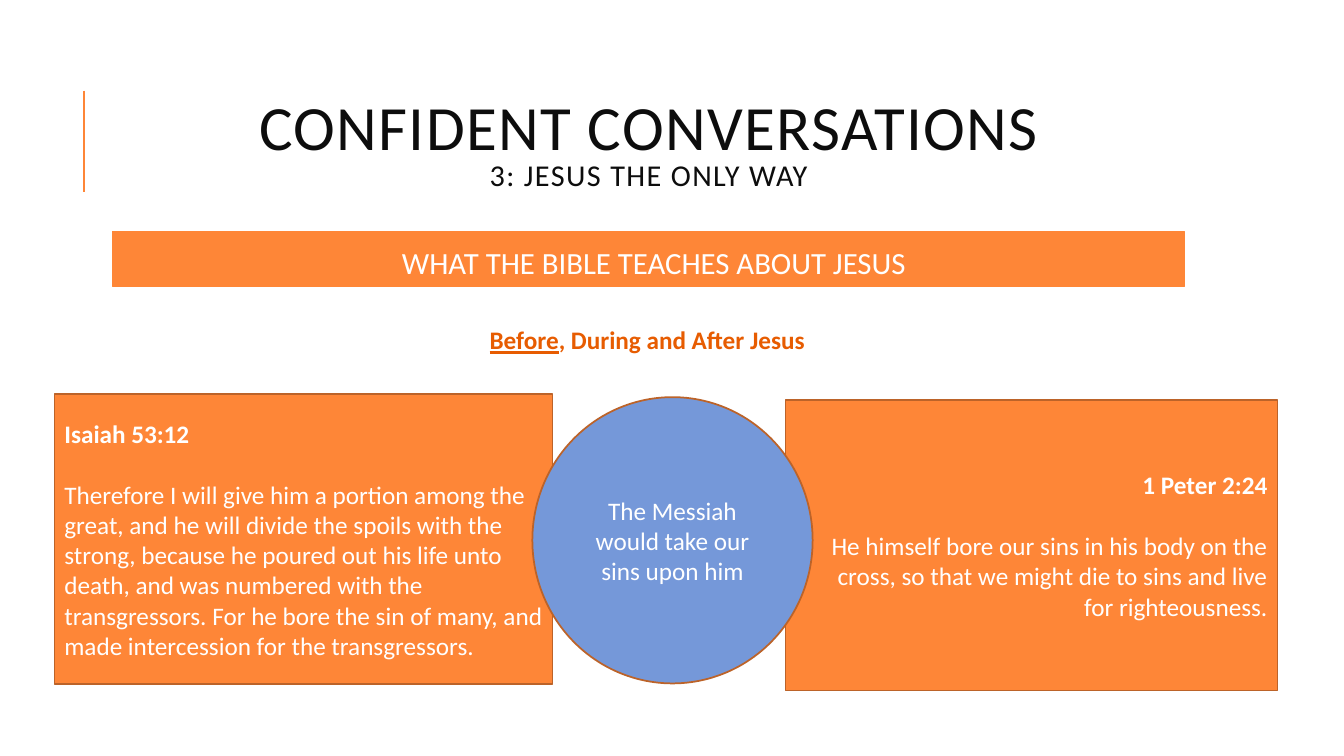
from pptx import Presentation
from pptx.dml.color import RGBColor
from pptx.enum.shapes import MSO_CONNECTOR as Link, MSO_SHAPE as Form
from pptx.enum.text import MSO_ANCHOR as Anchor, PP_ALIGN as Align
from pptx.oxml.ns import qn
from pptx.util import Emu, Pt
from lxml.etree import SubElement

PX = 9144  # EMU in one px, 100 px to the inch


def px(*sizes):
    return [Emu(size * PX) for size in sizes]


def tint(code):
    return RGBColor.from_string(code)


def text(para, words, size=18, color="FFFFFF", bold=False, under=False, track=0):
    """Add a run to a paragraph; track is letter spacing in points."""
    run = para.add_run()
    run.text = words
    font = run.font
    font.name, font.size = Deck.face, Pt(size)
    font.bold, font.underline = bold, under
    font.color.rgb = tint(color)
    if track:
        run._r.get_or_add_rPr().set("spc", str(track * 100))


class Deck:
    face = "Calibri"
    orange, rust, blue = "FE8637", "BC6329", "7598D9"
    ink, flame = "0D0D0D", "E75C01"

    def __init__(self):
        self.show = Presentation()
        self.show.slide_width, self.show.slide_height = px(1333, 750)
        self.slide = self.show.slides.add_slide(self.show.slide_layouts[6])

    def line(self, x1, y1, x2, y2):
        rule = self.slide.shapes.add_connector(Link.STRAIGHT, *px(x1, y1, x2, y2))
        rule.line.color.rgb, rule.line.width = tint(self.orange), Pt(1.5)
        SubElement(rule._element.spPr, qn("a:effectLst"))

    def shape(self, box, form=Form.RECTANGLE, fill=orange, edge=rust, width=1.25):
        item = self.slide.shapes.add_shape(form, *px(*box))
        item.shadow.inherit = False
        item.fill.solid()
        item.fill.fore_color.rgb = tint(fill)
        item.line.color.rgb, item.line.width = tint(edge), Pt(width)
        return item.text_frame

    def label(self, box):
        return self.slide.shapes.add_textbox(*px(*box)).text_frame

    def paras(self, frame, rows, align=Align.CENTER, anchor=Anchor.MIDDLE,
              lead=None, gap=0):
        """Fill a frame; each row is a list of (words, format) runs.

        The gap in points goes between the first and second rows.
        """
        frame.word_wrap, frame.vertical_anchor = True, anchor
        for i, row in enumerate(rows):
            para = frame.add_paragraph() if i else frame.paragraphs[0]
            para.alignment, para.line_spacing = align, lead
            if i == 1 and gap:
                para.space_before = Pt(gap)
            for words, style in row:
                text(para, words, **style)

    def verse(self, box, source, *lines, align):
        rows = [[(source, {"bold": True})]] + [[(words, {})] for words in lines]
        self.paras(self.shape(box), rows, align, gap=22)


def main():
    deck = Deck()
    deck.line(83, 90, 83, 190)
    deck.verse((779, 397, 488, 288), "1 Peter 2:24",
               "He himself bore our sins in his body on the cross, "
               "so that we might die to sins and live",
               "for righteousness.", align=Align.RIGHT)

    head = {"color": deck.ink, "track": 1}
    deck.paras(deck.label((112, 64, 1063, 164)),
               [[("CONFIDENT CONVERSATIONS", {"size": 45, **head})],
                [("3: JESUS THE ONLY WAY", {"size": 21.6, **head})]], lead=0.8)

    band = deck.shape((112, 230, 1063, 54), edge=deck.orange, width=0.75)
    band.margin_left, band.margin_top, band.margin_right, band.margin_bottom = px(15, 5, 5, 5)
    deck.paras(band, [[("WHAT THE BIBLE TEACHES ABOUT JESUS", {"size": 22})]],
               anchor=Anchor.TOP, lead=1.2)

    era = {"color": deck.flame, "bold": True}
    deck.paras(deck.label((112, 317, 1060, 40)),
               [[("Before", {"under": True, **era}),
                 (", During and After Jesus", era)]], anchor=Anchor.TOP)

    deck.verse((54, 391, 494, 288), "Isaiah 53:12",
               "Therefore I will give him a portion among the great, and he will "
               "divide the spoils with the strong, because he poured out his life "
               "unto death, and was numbered with the transgressors. For he bore "
               "the sin of many, and made intercession for the transgressors.",
               align=Align.LEFT)
    deck.paras(deck.shape((528, 394, 278, 284), Form.OVAL, deck.blue),
               [[("The Messiah would take our sins upon him", {})]])
    deck.show.save("out.pptx")


if __name__ == "__main__":
    main()
